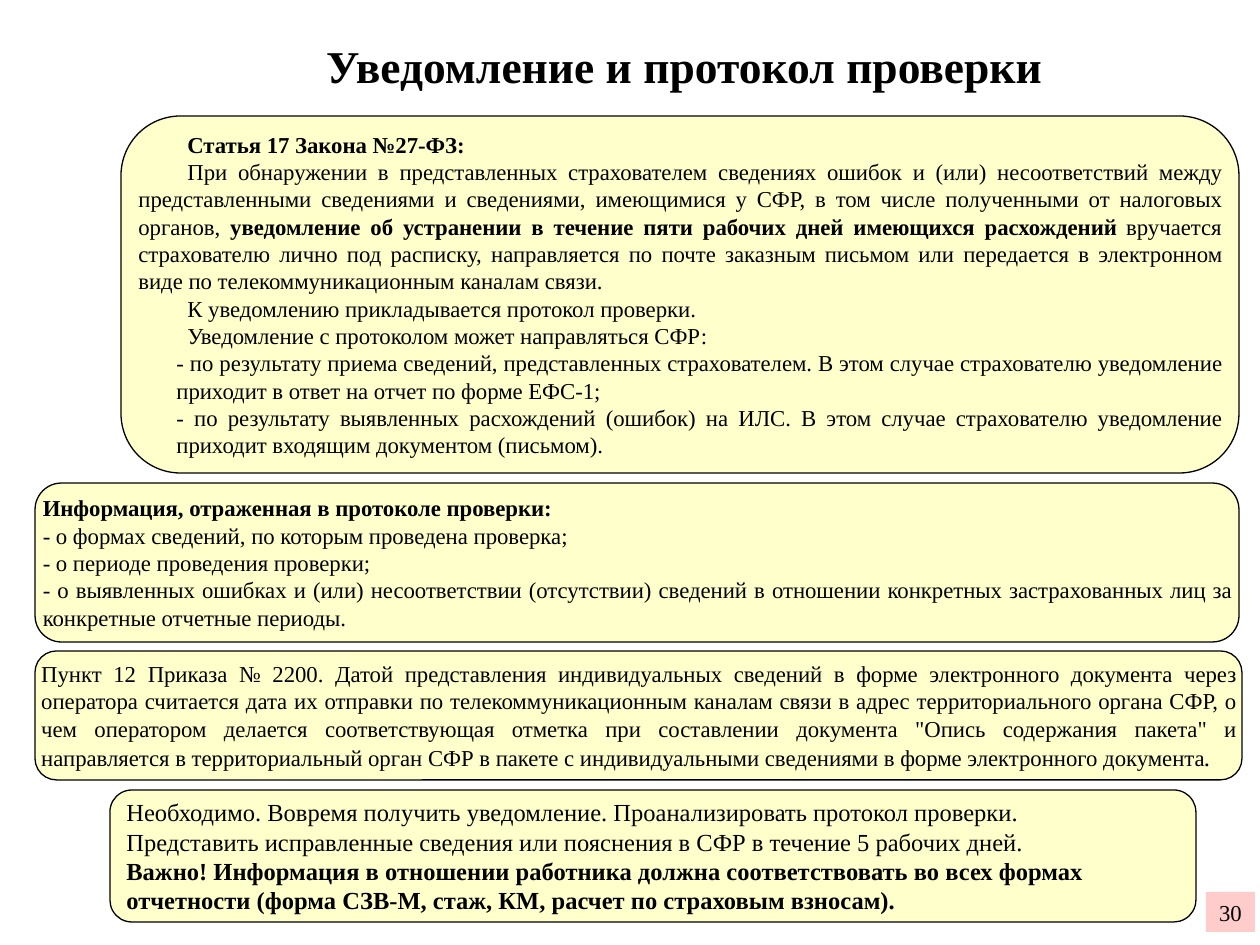
from dataclasses import dataclass

from pptx import Presentation
from pptx.dml.color import RGBColor
from pptx.enum.shapes import MSO_SHAPE as Shape
from pptx.enum.text import MSO_ANCHOR as Anchor, PP_ALIGN as Align
from pptx.util import Emu, Pt

EMU_PER_PX = 914400 / 126
FONT = "Times New Roman"
BLACK, CREAM, PINK = "000000", "FFFFCC", "FFCCCC"


@dataclass(frozen=True)
class Run:
    text: str
    size: int = 13
    bold: bool = False


@dataclass(frozen=True)
class Para:
    runs: tuple[Run, ...]
    align: Align = Align.LEFT
    margin: int = 0
    indent: int = 0


@dataclass(frozen=True)
class Panel:
    x: int
    y: int
    w: int
    h: int
    paras: tuple[Para, ...]
    inset: int = 0


def px(n: int) -> Emu:
    return Emu(round(n * EMU_PER_PX))


def color(code: str) -> RGBColor:
    return RGBColor.from_string(code)


def para(text: str, align: Align = Align.LEFT, size: int = 13,
         bold: bool = False, margin: int = 0, indent: int = 0) -> Para:
    return Para((Run(text, size, bold),), align, margin, indent)


def write(tf, paras: tuple[Para, ...], **frame) -> None:
    for name, value in {"word_wrap": True, "vertical_anchor": Anchor.MIDDLE, **frame}.items():
        setattr(tf, name, value)
    for i, item in enumerate(paras):
        p = tf.add_paragraph() if i else tf.paragraphs[0]
        p.alignment = item.align
        pPr = p._p.get_or_add_pPr()
        pPr.set("marL", str(px(item.margin)))
        pPr.set("indent", str(px(item.indent)))
        for run in item.runs:
            r = p.add_run()
            r.text = run.text
            for name, value in {"name": FONT, "size": Pt(run.size), "bold": run.bold}.items():
                setattr(r.font, name, value)
            r.font.color.rgb = color(BLACK)


def add_filled(s, kind: Shape, x: int, y: int, w: int, h: int, fill: str):
    sp = s.shapes.add_shape(kind, px(x), px(y), px(w), px(h))
    sp.shadow.inherit = False
    sp.fill.solid()
    sp.fill.fore_color.rgb = color(fill)
    return sp


def add_panel(s, panel: Panel) -> None:
    sp = add_filled(s, Shape.FLOWCHART_ALTERNATE_PROCESS,
                    panel.x, panel.y, panel.w, panel.h, CREAM)
    sp.line.color.rgb = color(BLACK)
    sp.line.width = Pt(0.75)
    write(sp.text_frame, panel.paras, margin_left=px(panel.inset),
          margin_top=0, margin_right=0, margin_bottom=0)


def add_title(s, text: str) -> None:
    sp = s.shapes.add_textbox(px(144), px(16), px(1081), px(98))
    write(sp.text_frame, (para(text, Align.CENTER, 26, True),))


def add_page_number(s, text: str) -> None:
    sp = add_filled(s, Shape.RECTANGLE, 1206, 892, 49, 40, PINK)
    sp.line.fill.background()
    write(sp.text_frame, (para(text, Align.CENTER),), word_wrap=False)


LAW = {"align": Align.JUSTIFY, "indent": 49}
CASE = {"align": Align.JUSTIFY, "margin": 38}

PANELS = (
    Panel(35, 483, 1204, 159, (
        para("Информация, отраженная в протоколе проверки:", bold=True),
        para("- о формах сведений, по которым проведена проверка;"),
        para("- о периоде проведения проверки;"),
        para("- о выявленных ошибках и (или) несоответствии (отсутствии) сведений в отношении "
             "конкретных застрахованных лиц за конкретные отчетные периоды.", Align.JUSTIFY),
    )),
    Panel(121, 116, 1118, 357, (
        para("Статья 17 Закона №27-ФЗ:", bold=True, **LAW),
        Para((
            Run("При обнаружении в представленных страхователем сведениях ошибок и (или) "
                "несоответствий между представленными сведениями и сведениями, имеющимися у СФР, "
                "в том числе полученными от налоговых органов, "),
            Run("уведомление об устранении в течение пяти рабочих дней имеющихся расхождений",
                bold=True),
            Run(" вручается страхователю лично под расписку, направляется по почте заказным "
                "письмом или передается в электронном виде по телекоммуникационным каналам связи."),
        ), **LAW),
        para("К уведомлению прикладывается протокол проверки.", **LAW),
        para("Уведомление с протоколом может направляться СФР:", **LAW),
        para("- по результату приема сведений, представленных страхователем. В этом случае "
             "страхователю уведомление приходит в ответ на отчет по форме ЕФС-1;", **CASE),
        para("- по результату выявленных расхождений (ошибок) на ИЛС. В этом случае "
             "страхователю уведомление приходит входящим документом (письмом).", **CASE),
    )),
    Panel(110, 790, 1086, 132, (
        para("Необходимо. Вовремя получить уведомление. Проанализировать протокол проверки.",
             size=14),
        para("Представить исправленные сведения или пояснения в СФР в течение 5 рабочих дней.",
             size=14),
        para("Важно! Информация в отношении работника должна соответствовать во всех формах "
             "отчетности (форма СЗВ-М, стаж, КМ, расчет по страховым взносам).",
             size=14, bold=True),
    ), inset=10),
    Panel(35, 651, 1207, 129, (
        Para((
            Run("Пункт 12 Приказа № 2200. Датой представления индивидуальных сведений в форме "
                "электронного документа через оператора считается дата их отправки по "
                "телекоммуникационным каналам связи в адрес территориального органа СФР, о чем "
                "оператором делается соответствующая отметка при составлении документа \"Опись "
                "содержания пакета\" и направляется в территориальный орган СФР в пакете с "
                "индивидуальными сведениями в форме электронного документа"),
            Run(".", 14),
        ), Align.JUSTIFY),
    )),
)


def main() -> None:
    prs = Presentation()
    prs.slide_width, prs.slide_height = px(1260), px(945)
    s = prs.slides.add_slide(prs.slide_layouts[6])
    add_title(s, "Уведомление и протокол проверки")
    for panel in PANELS:
        add_panel(s, panel)
    add_page_number(s, "30")
    prs.save("out.pptx")


if __name__ == "__main__":
    main()
